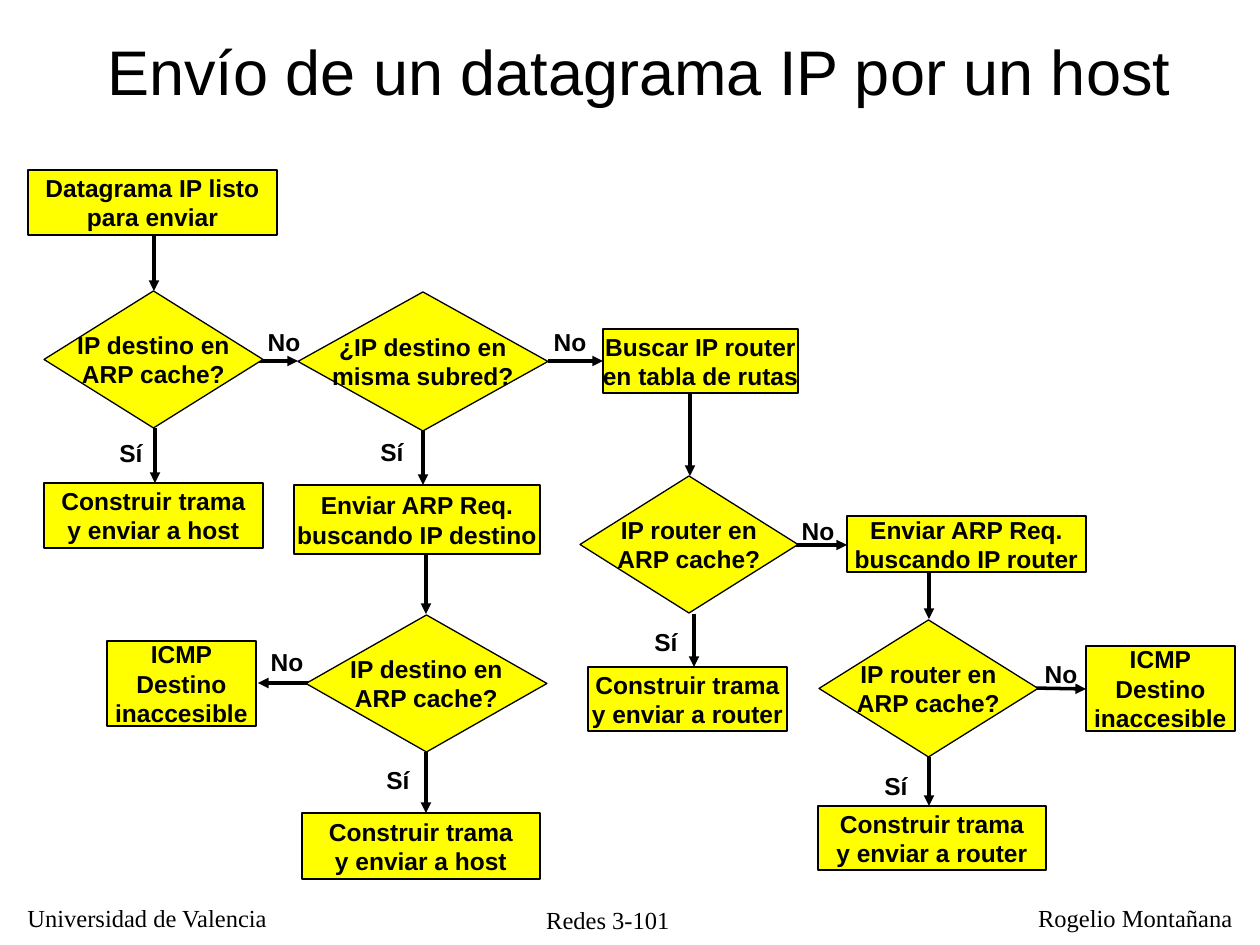
"""Build the flowchart slide on how a host sends an IP datagram."""
from lxml import etree
from pptx import Presentation
from pptx import util as u
from pptx.dml.color import RGBColor
from pptx.enum import shapes, text
from pptx.oxml.ns import qn

BLACK = RGBColor(0, 0, 0)
YELLOW = RGBColor(255, 255, 0)
PX = 914400 / 126
RECT, DIAMOND = shapes.MSO_SHAPE.RECTANGLE, shapes.MSO_SHAPE.DIAMOND
LEFT, CENTER, RIGHT = text.PP_ALIGN.LEFT, text.PP_ALIGN.CENTER, text.PP_ALIGN.RIGHT
GROW, FIXED = text.MSO_AUTO_SIZE.SHAPE_TO_FIT_TEXT, text.MSO_AUTO_SIZE.NONE
TOP, MIDDLE = text.MSO_ANCHOR.TOP, text.MSO_ANCHOR.MIDDLE


def px(*lengths):
    return [u.Emu(round(length * PX)) for length in lengths]


def write(shape, content, size=14, font="Arial", bold=True, align=CENTER, anchor=TOP, fit=GROW):
    frame = shape.text_frame
    frame.word_wrap = False
    frame.auto_size = fit
    frame.vertical_anchor = anchor
    frame.text = content
    for paragraph in frame.paragraphs:
        paragraph.alignment = align
        paragraph.font.size = u.Pt(size)
        paragraph.font.name = font
        paragraph.font.bold = bold
        paragraph.font.color.rgb = BLACK


presentation = Presentation()
presentation.slide_width, presentation.slide_height = px(1260, 945)
slide = presentation.slides.add_slide(presentation.slide_layouts[6])

footers = [
    ("Universidad de Valencia", LEFT, 15, 897, 268, 42),
    ("Redes 3-101", CENTER, 526, 899, 164, 38),
    ("Rogelio Montañana", RIGHT, 1021, 897, 224, 42),
]
for content, align, *box in footers:
    write(slide.shapes.add_textbox(*px(*box)), content, font="Times New Roman", bold=False, align=align)

title = slide.shapes.add_textbox(*px(94, 26, 1090, 88))
write(title, "Envío de un datagrama IP por un host", size=36, bold=False)

arrows = [
    (154, 235, 154, 291), (238, 361, 298, 361), (155, 428, 155, 483),
    (548, 361, 603, 361), (423, 431, 423, 485), (426, 555, 426, 614),
    (326, 683, 258, 683), (426, 752, 426, 813), (690, 393, 690, 476),
    (796, 545, 847, 545), (694, 614, 694, 667), (929, 572, 929, 619),
    (1031, 688, 1086, 689), (929, 757, 929, 806),
]
for ends in arrows:
    arrow = slide.shapes.add_connector(shapes.MSO_CONNECTOR.STRAIGHT, *px(*ends))
    arrow.line.color.rgb = BLACK
    arrow.line.width = u.Pt(2)
    etree.SubElement(arrow.line._get_or_add_ln(), qn("a:tailEnd"), type="triangle")
    etree.SubElement(arrow._element.spPr, qn("a:effectLst"))

to_host = "Construir trama\ny enviar a host"
to_router = "Construir trama\ny enviar a router"
host_cached = "IP destino en\nARP cache?"
router_cached = "IP router en\nARP cache?"
unreachable = "ICMP\nDestino\ninaccesible"
steps = [
    (RECT, "Datagrama IP listo\npara enviar", 28, 170, 249, 65),
    (DIAMOND, host_cached, 44, 291, 219, 137),
    (RECT, to_host, 44, 483, 219, 65),
    (DIAMOND, "¿IP destino en\nmisma subred?", 298, 292, 250, 139),
    (RECT, "Enviar ARP Req.\nbuscando IP destino", 294, 485, 246, 69),
    (DIAMOND, host_cached, 306, 615, 241, 137),
    (RECT, unreachable, 107, 641, 149, 85),
    (RECT, to_host, 302, 813, 238, 66),
    (RECT, "Buscar IP router\nen tabla de rutas", 603, 329, 195, 64),
    (DIAMOND, router_cached, 580, 476, 218, 137),
    (RECT, to_router, 588, 667, 199, 64),
    (RECT, "Enviar ARP Req.\nbuscando IP router", 847, 516, 239, 56),
    (DIAMOND, router_cached, 819, 620, 219, 137),
    (RECT, unreachable, 1086, 646, 149, 85),
    (RECT, to_router, 818, 806, 228, 64),
]
for kind, content, *box in steps:
    step = slide.shapes.add_shape(kind, *px(*box))
    step.shadow.inherit = False
    step.fill.solid()
    step.fill.fore_color.rgb = YELLOW
    step.line.color.rgb = BLACK
    step.line.width = u.Pt(0.75)
    write(step, content, anchor=MIDDLE, fit=FIXED)

answers = [
    ("No", CENTER, 58, [(255, 321), (541, 321), (789, 510), (258, 641), (1032, 653)]),
    ("Sí", RIGHT, 49, [(106, 432), (367, 431), (641, 621), (373, 759), (871, 765)]),
]
for content, align, width, places in answers:
    for left, top in places:
        write(slide.shapes.add_textbox(*px(left, top, width, 42)), content, align=align)

presentation.save("out.pptx")
